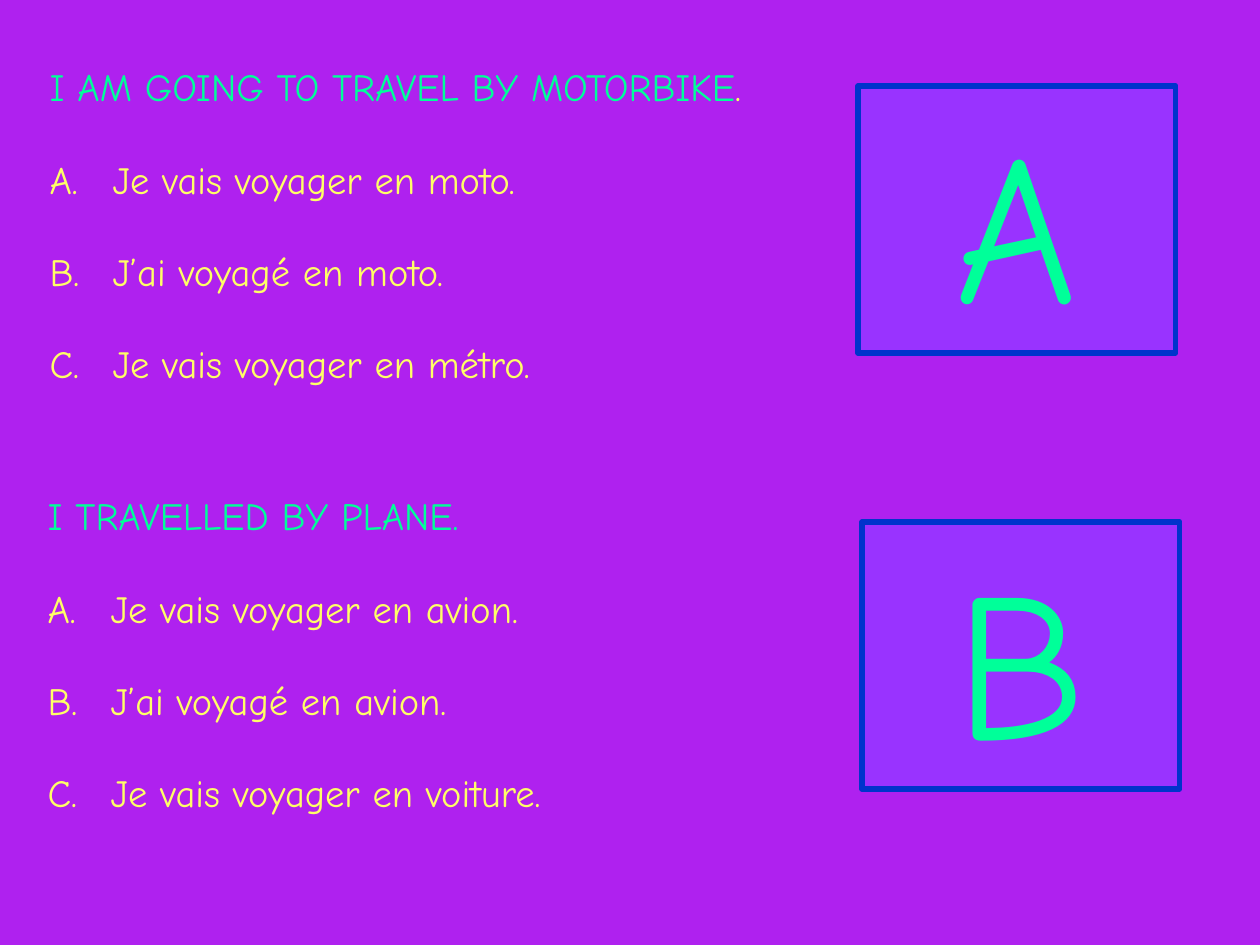
from pptx import Presentation
from pptx.dml.color import RGBColor
from pptx.enum.shapes import MSO_SHAPE as SHAPE
from pptx.enum.text import MSO_ANCHOR as ANCHOR, MSO_AUTO_SIZE as AUTO, PP_ALIGN as ALIGN
from pptx.oxml.ns import qn
from pptx.util import Emu, Pt

PX = 914400 // 126
FONT = "Comic Neue"
GREEN, YELLOW, PURPLE, VIOLET, BLUE = "00FF99", "FFFF66", "AF21EF", "9933FF", "0033CC"


def px(n):
    """Turn pixels into EMU."""
    return Emu(n * PX)


def rgb(code):
    """Turn a hex string into a colour."""
    return RGBColor.from_string(code)


def set_font(font, size, color):
    """Give a font the slide's typeface, a size and a colour."""
    font.name, font.size, font.bold = FONT, Pt(size), False
    font.color.rgb = rgb(color)


def set_bullet(p, numbered):
    """Number a paragraph with capital letters, or remove its bullet."""
    pPr = p._p.get_or_add_pPr()
    indent = px(63) if numbered else 0
    pPr.set("marL", str(indent))
    pPr.set("indent", str(-indent))
    bullet = pPr.makeelement(qn("a:buAutoNum" if numbered else "a:buNone"), {})
    if numbered:
        bullet.set("type", "alphaUcPeriod")
    pPr.insert_element_before(bullet, "a:tabLst", "a:defRPr", "a:extLst")


def add_question(sp, box, heading, answers):
    """Fill a body placeholder with a heading and its lettered answers."""
    sp.left, sp.top, sp.width, sp.height = map(px, box)
    tf = sp.text_frame
    tf.word_wrap, tf.auto_size, tf.vertical_anchor = True, AUTO.NONE, ANCHOR.TOP
    for i, runs in enumerate([heading] + [[(a, YELLOW)] for a in answers]):
        p = tf.add_paragraph() if i else tf.paragraphs[0]
        p.space_before, p.space_after = Pt(0), Pt(26.4)
        set_font(p.font, 22, runs[0][1])
        set_bullet(p, i > 0)
        for text, color in runs:
            r = p.add_run()
            r.text = text
            set_font(r.font, 22, color)


def add_answer_card(s, box, letter):
    """Draw a framed card with the letter of the right answer."""
    sp = s.shapes.add_shape(SHAPE.RECTANGLE, *map(px, box))
    sp.shadow.inherit = False
    sp.fill.solid()
    sp.fill.fore_color.rgb = rgb(VIOLET)
    sp.line.color.rgb = rgb(BLUE)
    sp.line.width = Pt(3)
    tf = sp.text_frame
    tf.word_wrap, tf.vertical_anchor = True, ANCHOR.MIDDLE
    p = tf.paragraphs[0]
    p.alignment = ALIGN.CENTER
    r = p.add_run()
    r.text = letter
    set_font(r.font, 120, GREEN)


def main():
    """Build the quiz slide."""
    prs = Presentation()
    prs.slide_width, prs.slide_height = px(1260), px(945)
    s = prs.slides.add_slide(prs.slide_layouts[3])
    s.background.fill.solid()
    s.background.fill.fore_color.rgb = rgb(PURPLE)
    title, first, second = s.placeholders
    title.element.getparent().remove(title.element)

    add_question(first, (37, 57, 820, 386),
                 [("I AM GOING TO TRAVEL BY MOTORBIKE", GREEN), (".", YELLOW)],
                 ["Je vais voyager en moto.", "J’ai voyagé en moto.", "Je vais voyager en métro."])
    add_answer_card(s, (858, 86, 318, 267), "A")
    add_question(second, (35, 486, 862, 386),
                 [("I TRAVELLED BY PLANE.", GREEN)],
                 ["Je vais voyager en avion.", "J’ai voyagé en avion.", "Je vais voyager en voiture."])
    add_answer_card(s, (862, 522, 318, 267), "B")
    prs.save("out.pptx")


if __name__ == "__main__":
    main()
